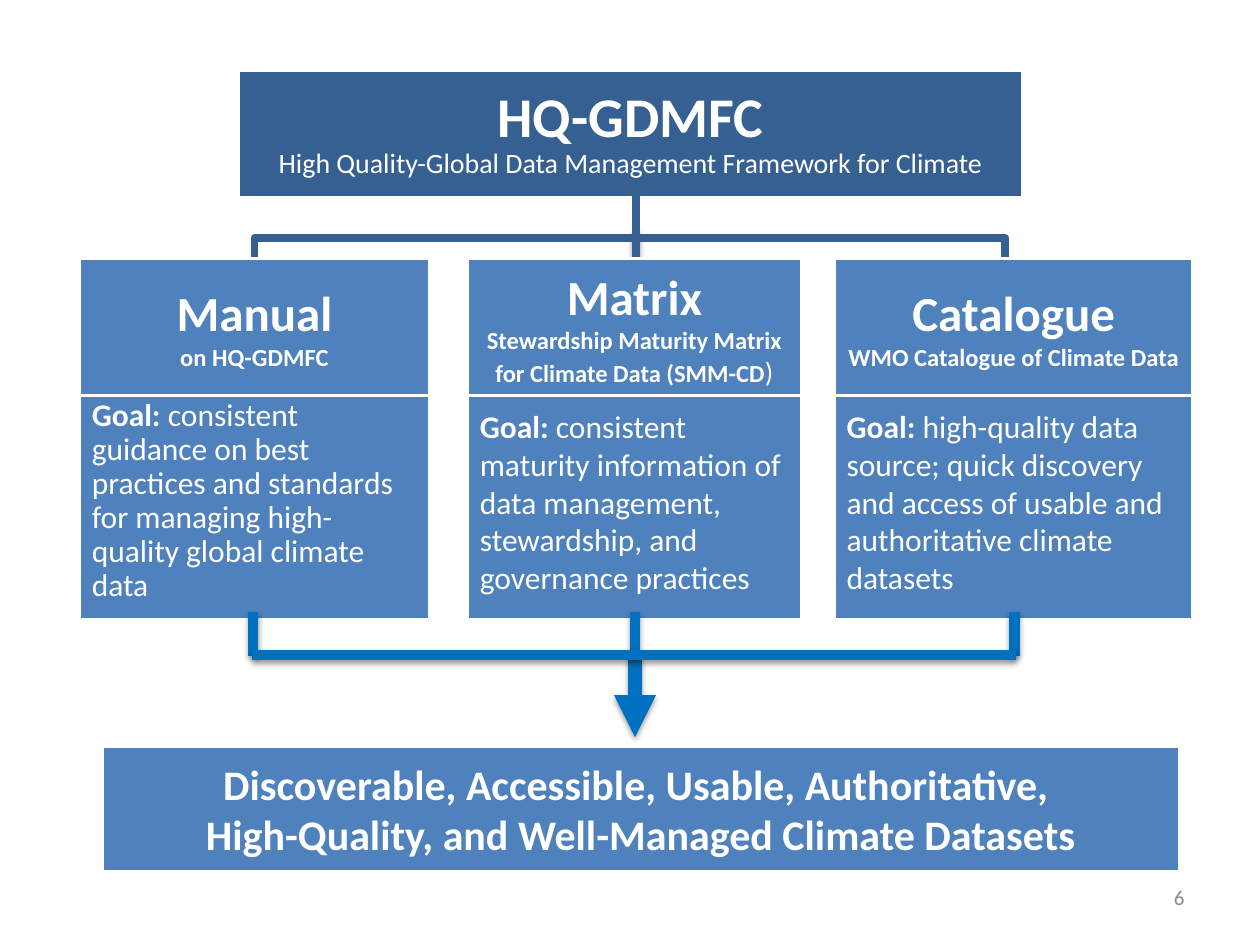
import pptx
import pptx.dml.color
import pptx.enum.shapes
import pptx.enum.text
import pptx.oxml
import pptx.oxml.ns
import pptx.util
from pptx.util import Inches

NAVY, BLUE, BRIGHT, WHITE, GREY = "376092", "4F81BD", "0070C0", "FFFFFF", "8C8C8C"
ALIGN = pptx.enum.text.PP_ALIGN


def colour(hex_code):
    return pptx.dml.color.RGBColor.from_string(hex_code)


def add_run(paragraph, text, size=18, bold=False, color=WHITE, font="Calibri"):
    run = paragraph.add_run()
    run.text = text
    run.font.size = pptx.util.Pt(size)
    run.font.bold = bold
    run.font.name = font
    run.font.color.rgb = colour(color)


class Diagram:
    """Holds the current slide and draws its elements in one style."""

    border = 2
    shadow = (
        f'<a:effectLst {pptx.oxml.ns.nsdecls("a")}>'
        '<a:outerShdw blurRad="40000" dist="20000" dir="5400000" rotWithShape="0">'
        '<a:srgbClr val="000000"><a:alpha val="38000"/></a:srgbClr>'
        '</a:outerShdw></a:effectLst>'
    )
    arrowhead = f'<a:tailEnd {pptx.oxml.ns.nsdecls("a")} type="triangle"/>'

    def __init__(self, slide):
        self.shapes = slide.shapes

    def fill_text(self, shape, paragraphs, align=ALIGN.CENTER, spacing=None, after=None,
                  inset=None):
        """Each paragraph is a list of (text, format) runs."""
        frame = shape.text_frame
        frame.word_wrap = True
        frame.vertical_anchor = pptx.enum.text.MSO_ANCHOR.MIDDLE
        if inset is not None:
            frame.margin_left = frame.margin_right = Inches(inset)
            frame.margin_top = frame.margin_bottom = Inches(inset)
        for number, runs in enumerate(paragraphs):
            paragraph = frame.add_paragraph() if number else frame.paragraphs[0]
            paragraph.alignment = align
            if spacing:
                paragraph.line_spacing = spacing
            if after:
                paragraph.space_after = pptx.util.Pt(after)
            for text, style in runs:
                add_run(paragraph, text, **style)

    def box(self, left, top, width, height, paragraphs, fill=BLUE, **layout):
        box = self.shapes.add_shape(
            pptx.enum.shapes.MSO_SHAPE.RECTANGLE,
            Inches(left), Inches(top), Inches(width), Inches(height))
        box.shadow.inherit = False
        box.fill.solid()
        box.fill.fore_color.rgb = colour(fill)
        box.line.color.rgb = colour(WHITE)
        box.line.width = pptx.util.Pt(self.border)
        self.fill_text(box, paragraphs, **layout)

    def label(self, left, top, width, height, paragraphs, **layout):
        label = self.shapes.add_textbox(
            Inches(left), Inches(top), Inches(width), Inches(height))
        self.fill_text(label, paragraphs, **layout)

    def line(self, start, end, color, weight, arrow=False):
        line = self.shapes.add_connector(
            pptx.enum.shapes.MSO_CONNECTOR.STRAIGHT,
            *(Inches(value) for value in (*start, *end)))
        line.line.color.rgb = colour(color)
        line.line.width = pptx.util.Pt(weight)
        properties = line._element.spPr
        if arrow:
            outline = properties.find(pptx.oxml.ns.qn("a:ln"))
            outline.append(pptx.oxml.parse_xml(self.arrowhead))
        properties.append(pptx.oxml.parse_xml(self.shadow))

    def elbow(self, points, color, weight):
        first, *rest = [(Inches(x), Inches(y)) for x, y in points]
        builder = self.shapes.build_freeform(*first)
        builder.add_line_segments(rest, close=False)
        elbow = builder.convert_to_shape()
        elbow.shadow.inherit = False
        elbow.fill.background()
        elbow.line.color.rgb = colour(color)
        elbow.line.width = pptx.util.Pt(weight)


def main():
    deck = pptx.Presentation()
    deck.slide_width, deck.slide_height = Inches(10), Inches(7.5)
    diagram = Diagram(deck.slides.add_slide(deck.slide_layouts[6]))
    bold = {"bold": True}
    title = {"size": 28, "bold": True}
    subtitle = {"size": 14, "bold": True}

    # Framework and its branches
    diagram.line((5.05, 1.83), (5.05, 2.04), NAVY, 4.5)
    diagram.box(1.89, 0.56, 6.23, 1.01, [
        [("HQ-GDMFC", {"size": 32, "bold": True})],
        [("High Quality-Global Data Management Framework for Climate", {"size": 16})],
    ], fill=NAVY, spacing=0.9, inset=0.02)
    for branch_x in (7.98, 2.02):
        diagram.elbow([(5.05, 1.55), (5.05, 1.89), (branch_x, 1.89), (branch_x, 2.04)],
                      NAVY, 4.5)

    # Three components: left, width, name, subtitle runs, goal, goal layout
    components = [
        (0.63, 2.78, "Manual", [("on HQ-GDMFC", subtitle)],
         "consistent guidance on best practices and standards for managing "
         "high-quality global climate data", {"spacing": 0.9, "after": 4}),
        (3.71, 2.65, "Matrix",
         [("Stewardship Maturity Matrix for Climate Data (SMM-CD", subtitle),
          (")", {"size": 16})],
         "consistent maturity information of data management, stewardship, "
         "and governance practices", {}),
        (6.62, 2.85, "Catalogue", [("WMO Catalogue of Climate Data", subtitle)],
         "high-quality data source; quick discovery and access of usable and "
         "authoritative climate datasets", {}),
    ]
    for left, width, name, about, goal, layout in components:
        diagram.box(left, 3.04, width, 1.88, [[("Goal: ", bold), (goal, {})]],
                    align=ALIGN.LEFT, **layout)
        diagram.box(left, 2.05, width, 1.09, [[(name, title)], about])

    # Outcome, with the lines that lead to it
    diagram.line((5.04, 5.2), (5.04, 5.85), BRIGHT, 8, arrow=True)
    outcome = {"size": 24, "bold": True}
    diagram.box(0.81, 5.92, 8.55, 1, [
        [("Discoverable, Accessible, Usable, Authoritative, ", outcome)],
        [("High-Quality, and Well-Managed Climate Datasets", outcome)],
    ])
    for stem_x in (8.05, 2.01, 5.04):
        diagram.line((stem_x, 4.86), (stem_x, 5.21), BRIGHT, 6)
    diagram.line((2, 5.2), (8.06, 5.2), BRIGHT, 6)

    # Slide number
    diagram.label(7.17, 6.92, 2.33, 0.4, [[("6", {"size": 12, "color": GREY})]],
                  align=ALIGN.RIGHT)

    deck.save("out.pptx")


if __name__ == "__main__":
    main()
